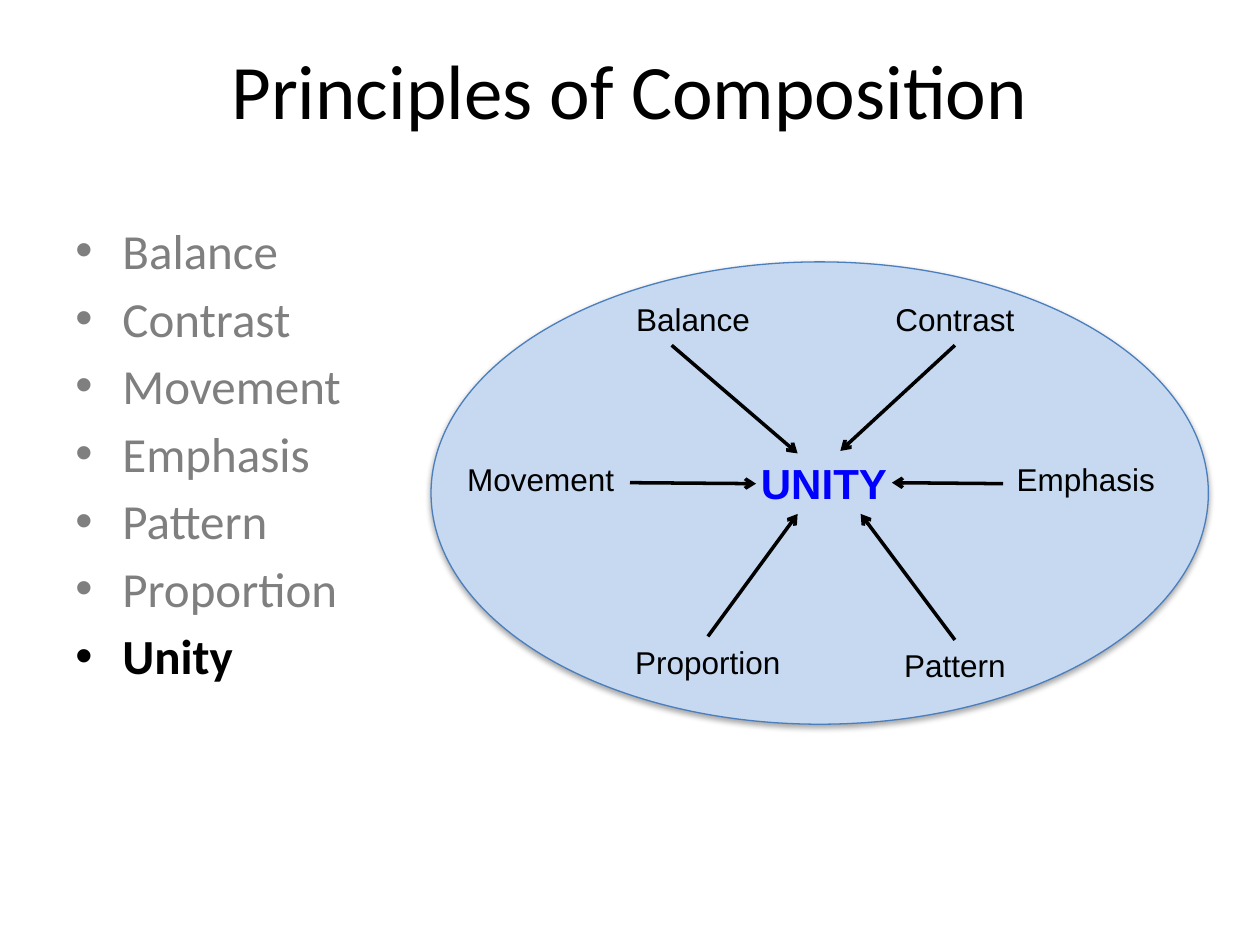
from dataclasses import dataclass

from lxml.etree import SubElement
from pptx import Presentation
from pptx.dml.color import RGBColor
from pptx.enum.shapes import MSO_CONNECTOR, MSO_SHAPE
from pptx.enum.text import MSO_ANCHOR, PP_ALIGN
from pptx.oxml.ns import qn
from pptx.slide import Slide
from pptx.text.text import TextFrame
from pptx.util import Cm, Pt


@dataclass(frozen=True)
class Font:
    name: str
    size: float
    color: str
    bold: bool = False


@dataclass(frozen=True)
class Theme:
    title: Font = Font("Calibri", 44, "000000")
    muted: Font = Font("Calibri", 28, "7F7F7F")
    active: Font = Font("Calibri", 28, "000000", True)
    label: Font = Font("Arial", 18, "000000")
    hub: Font = Font("Arial", 24, "0000FF", True)
    fill: str = "C6D9F1"
    edge: str = "4B7EBC"
    arrow: str = "000000"


@dataclass(frozen=True)
class Box:
    left: float
    top: float
    width: float
    height: float

    def lengths(self) -> tuple[Cm, ...]:
        return Cm(self.left), Cm(self.top), Cm(self.width), Cm(self.height)


@dataclass(frozen=True)
class Spoke:
    """A label and the arrow that leads from it to the hub, in cm."""
    name: str
    left: float
    top: float
    start: tuple[float, float]
    end: tuple[float, float]


THEME = Theme()
LABEL_WIDTH = 5.28
INDENT = Cm(0.95)
TOPICS = ("Balance", "Contrast", "Movement", "Emphasis",
          "Pattern", "Proportion", "Unity")
SPOKES = (
    Spoke("Balance", 11.33, 5.92, (13.54, 6.96), (16.08, 9.14)),
    Spoke("Contrast", 16.61, 5.92, (19.25, 6.96), (16.94, 9.09)),
    Spoke("Movement", 8.26, 9.14, (12.7, 9.73), (15.24, 9.75)),
    Spoke("Emphasis", 19.25, 9.14, (20.22, 9.75), (17.98, 9.73)),
    Spoke("Pattern", 16.61, 12.9, (19.25, 12.9), (17.35, 10.36)),
    Spoke("Proportion", 11.63, 12.83, (14.27, 12.83), (16.08, 10.36)),
)


def color(code: str) -> RGBColor:
    return RGBColor.from_string(code)


def add_frame(slide: Slide, box: Box) -> TextFrame:
    frame = slide.shapes.add_textbox(*box.lengths()).text_frame
    frame.word_wrap = True
    return frame


def style(para, font: Font) -> None:
    para.font.name = font.name
    para.font.size = Pt(font.size)
    para.font.bold = font.bold
    para.font.color.rgb = color(font.color)


def add_label(slide: Slide, text: str, box: Box, font: Font) -> None:
    frame = add_frame(slide, box)
    frame.vertical_anchor = MSO_ANCHOR.MIDDLE
    para = frame.paragraphs[0]
    para.text = text
    para.alignment = PP_ALIGN.CENTER
    style(para, font)


def add_list(slide: Slide, box: Box) -> None:
    frame = add_frame(slide, box)
    for i, topic in enumerate(TOPICS):
        para = frame.add_paragraph() if i else frame.paragraphs[0]
        para.text = topic
        para.space_before = Pt(5)
        style(para, THEME.active if topic == "Unity" else THEME.muted)
        props = para._p.get_or_add_pPr()
        props.set("marL", str(INDENT))
        props.set("indent", str(-INDENT))
        SubElement(props, qn("a:buFont"), typeface="Arial")
        SubElement(props, qn("a:buChar"), char="•")
        # Bullets must stand before the default run properties.
        props.append(props.find(qn("a:defRPr")))


def add_oval(slide: Slide, box: Box) -> None:
    oval = slide.shapes.add_shape(MSO_SHAPE.OVAL, *box.lengths())
    oval.fill.solid()
    oval.fill.fore_color.rgb = color(THEME.fill)
    oval.line.color.rgb = color(THEME.edge)
    oval.line.width = Pt(0.75)
    oval.shadow.inherit = False
    effects = oval._element.spPr.find(qn("a:effectLst"))
    shadow = SubElement(effects, qn("a:outerShdw"), blurRad=str(Pt(3.1)),
                        dist=str(Pt(1.8)), dir="5400000", rotWithShape="0")
    shade = SubElement(shadow, qn("a:srgbClr"), val="000000")
    SubElement(shade, qn("a:alpha"), val="35000")


def add_arrow(slide: Slide, spoke: Spoke) -> None:
    ends = (Cm(n) for n in spoke.start + spoke.end)
    arrow = slide.shapes.add_connector(MSO_CONNECTOR.STRAIGHT, *ends)
    arrow.line.color.rgb = color(THEME.arrow)
    arrow.line.width = Pt(2)
    SubElement(arrow.line._get_or_add_ln(), qn("a:tailEnd"), type="arrow")
    SubElement(arrow._element.spPr, qn("a:effectLst"))


def main() -> None:
    deck = Presentation()
    deck.slide_width, deck.slide_height = Cm(25.4), Cm(19.05)
    slide = deck.slides.add_slide(deck.slide_layouts[6])
    add_oval(slide, Box(8.69, 5.28, 15.67, 9.32))
    add_label(slide, "Principles of Composition",
              Box(1.27, 0.2, 22.86, 3.18), THEME.title)
    add_list(slide, Box(1.27, 4.32, 7.42, 10.69))
    add_label(slide, "UNITY", Box(13.97, 9.09, LABEL_WIDTH, 1.27), THEME.hub)
    for spoke in SPOKES:
        box = Box(spoke.left, spoke.top, LABEL_WIDTH, 1.02)
        add_label(slide, spoke.name, box, THEME.label)
        add_arrow(slide, spoke)
    deck.save("out.pptx")


if __name__ == "__main__":
    main()
